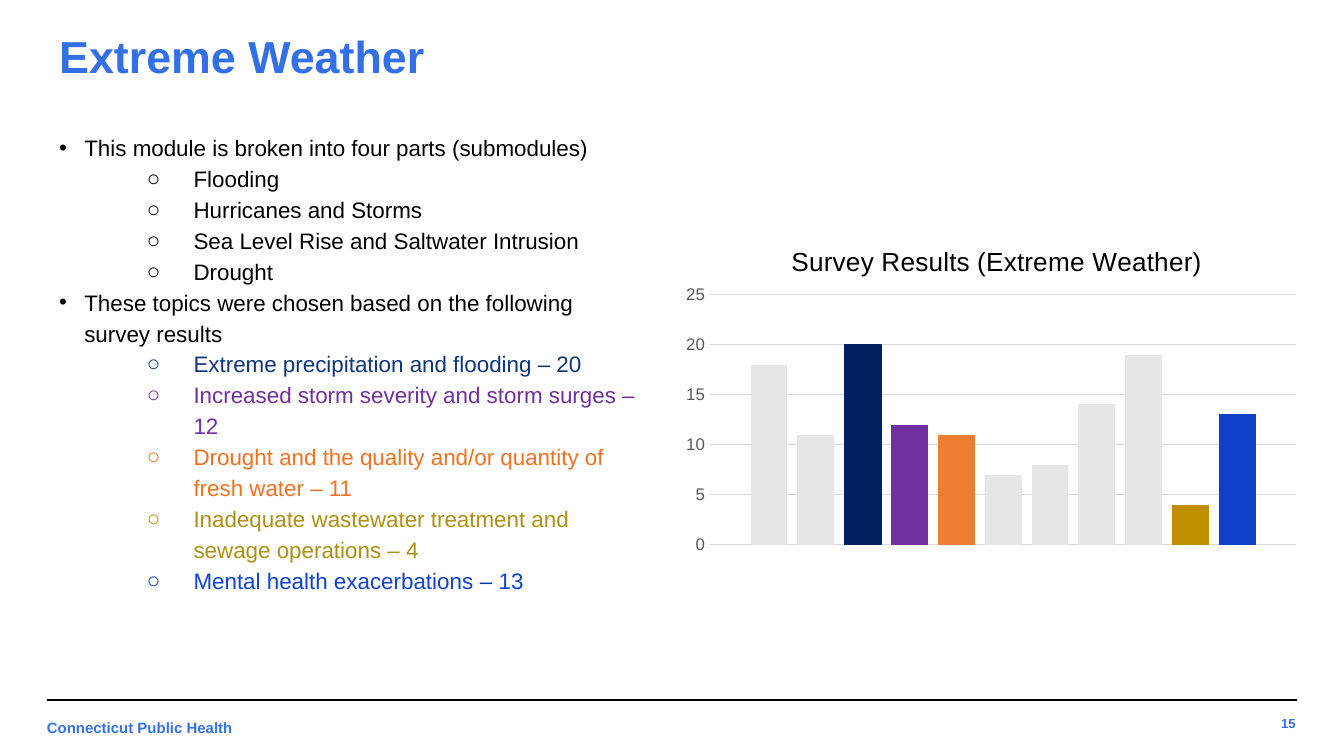
from lxml import etree
from pptx import Presentation
from pptx import util as u
from pptx.chart import data
from pptx.dml import color
from pptx.enum import chart as ch, shapes, text
from pptx.oxml import ns, parse_xml

Pt = u.Pt
FONT = "Arial"
COLORS = {
    "title": "3370E8", "footer": "3371E7", "black": "000000",
    "flood": "0F357E", "storm": "7030A0", "drought": "F17121",
    "sewage": "AD9113", "mental": "0F42D2", "dash": "003D9C",
    "axis": "595959", "grid": "D9D9D9", "bar": "E7E6E6",
    "flood_bar": "002060", "drought_bar": "ED7D31",
    "sewage_bar": "BF8F00", "mental_bar": "0E40C8",
}


def style(font, size, name, bold=False):
    font.name, font.size, font.bold = FONT, Pt(size), bold
    font.color.rgb = color.RGBColor.from_string(COLORS[name])


def place(sp, left, top, width, height):
    sp.left, sp.top, sp.width, sp.height = Pt(left), Pt(top), Pt(width), Pt(height)
    tf = sp.text_frame
    tf.word_wrap, tf.auto_size = True, text.MSO_AUTO_SIZE.NONE
    tf.margin_left = tf.margin_right = tf.margin_top = tf.margin_bottom = Pt(7.2)
    return tf


prs = Presentation()
prs.slide_width, prs.slide_height = Pt(720), Pt(405)
s = prs.slides.add_slide(prs.slide_layouts[1])

# Title
tf = place(s.shapes.title, 24.5, 18, 671, 23.8)
tf.text = "Extreme Weather"
tf.vertical_anchor = text.MSO_ANCHOR.MIDDLE
tf.paragraphs[0].alignment = text.PP_ALIGN.LEFT
style(tf.paragraphs[0].runs[0].font, 24, "title", True)

# Bulleted list: level, then (wording, colour) runs
items = [
    (0, [("This module is broken into four parts (submodules)", "black")]),
    (1, [("Flooding", "black")]),
    (1, [("Hurricanes and Storms", "black")]),
    (1, [("Sea Level Rise and Saltwater Intrusion", "black")]),
    (1, [("Drought", "black")]),
    (0, [("These topics were chosen based on the following survey results", "black")]),
    (1, [("Extreme precipitation and flooding – 20", "flood")]),
    (1, [("Increased storm severity and storm surges – 12", "storm")]),
    (1, [("Drought and the quality and/or quantity of fresh water – 11", "drought")]),
    (1, [("Inadequate wastewater treatment and sewage operations – 4", "sewage")]),
    (1, [("Mental health exacerbations ", "mental"), ("– ", "dash"), ("13", "mental")]),
]
bullets = [("•", 13.5, -13.5), ("○", 72, -25)]
tf = place(s.placeholders[1], 24.5, 62.6, 325.4, 293)
tf.vertical_anchor = text.MSO_ANCHOR.TOP
for i, (level, runs) in enumerate(items):
    p = tf.add_paragraph() if i else tf.paragraphs[0]
    p.level, p.line_spacing = level, 1.15
    p.space_before = p.space_after = Pt(0)
    p.alignment = text.PP_ALIGN.LEFT
    for wording, name in runs:
        r = p.add_run()
        r.text = wording
        style(r.font, 12, name)
    mark, margin, indent = bullets[level]
    pPr = p._p.get_or_add_pPr()
    pPr.set("marL", str(Pt(margin)))
    pPr.set("indent", str(Pt(indent)))
    etree.SubElement(pPr, ns.qn("a:buFont")).set("typeface", FONT)
    etree.SubElement(pPr, ns.qn("a:buChar")).set("char", mark)

# Survey chart: one series per answer
bars = [(18, "bar"), (11, "bar"), (20, "flood_bar"), (12, "storm"),
        (11, "drought_bar"), (7, "bar"), (8, "bar"), (14, "bar"),
        (19, "bar"), (4, "sewage_bar"), (13, "mental_bar")]
cd = data.CategoryChartData()
cd.categories = ["1"]
for i, (value, name) in enumerate(bars, 1):
    cd.add_series(f"Series {i}", [value])
chart = s.shapes.add_chart(ch.XL_CHART_TYPE.COLUMN_CLUSTERED, Pt(360), Pt(117.4),
                           Pt(341.3), Pt(183.6), cd).chart
style(chart.font, 10, "black")
chart.has_legend = False
chart.has_title = True
tf = chart.chart_title.text_frame
tf.text = "Survey Results (Extreme Weather)"
style(tf.paragraphs[0].runs[0].font, 14, "black")
chart.chart_title.include_in_layout = False

plot = chart.plots[0]
plot.gap_width, plot.overlap, plot.vary_by_categories = 219, -27, False
for series, (value, name) in zip(plot.series, bars):
    rgb = color.RGBColor.from_string(COLORS[name])
    series.format.fill.solid()
    series.format.fill.fore_color.rgb = rgb
    if name == "flood_bar":
        series.format.line.color.rgb = rgb
        series.format.line.width = Pt(0.75)

chart.category_axis.visible = False
axis = chart.value_axis
axis.minimum_scale, axis.maximum_scale, axis.major_unit = 0, 25, 5
axis.major_tick_mark = ch.XL_TICK_MARK.NONE
axis.format.line.fill.background()
style(axis.tick_labels.font, 9, "axis")
grid = axis.major_gridlines.format.line
grid.color.rgb = color.RGBColor.from_string(COLORS["grid"])
grid.width = Pt(0.75)

# Fixed places for the chart title and the plot area
layouts = [
    (chart.chart_title._element, {"xMode": "edge", "yMode": "edge", "x": 0.18, "y": 0.06}),
    (chart._chartSpace.chart.plotArea,
     {"layoutTarget": "inner", "xMode": "edge", "yMode": "edge",
      "x": 0.06, "y": 0.22, "w": 0.92, "h": 0.73}),
]
for parent, values in layouts:
    for old in parent.findall(ns.qn("c:layout")):
        parent.remove(old)
    inner = "".join(f'<c:{k} val="{v}"/>' for k, v in values.items())
    layout = parse_xml(f'<c:layout {ns.nsdecls("c")}><c:manualLayout>{inner}'
                       '</c:manualLayout></c:layout>')
    tx = parent.find(ns.qn("c:tx"))
    parent.insert(0 if tx is None else 1, layout)

# Footer rule
rule = s.shapes.add_connector(shapes.MSO_CONNECTOR.STRAIGHT,
                              Pt(694.8), Pt(375.1), Pt(25.2), Pt(375.1))
rule.line.color.rgb = color.RGBColor.from_string(COLORS["black"])
rule.line.width = Pt(0.75)
etree.SubElement(rule._element.spPr, ns.qn("a:effectLst"))

# Footer name and page number
footers = [
    ("Connecticut Public Health", 8, (18, 378, 236.2, 24.5),
     text.MSO_ANCHOR.TOP, text.PP_ALIGN.LEFT),
    ("15", 7, (658, 378.7, 43.2, 18), text.MSO_ANCHOR.MIDDLE, text.PP_ALIGN.RIGHT),
]
for wording, size, box, anchor, align in footers:
    tf = place(s.shapes.add_textbox(0, 0, 0, 0), *box)
    tf.text = wording
    tf.vertical_anchor = anchor
    tf.paragraphs[0].alignment = align
    style(tf.paragraphs[0].runs[0].font, size, "footer", True)

prs.save("out.pptx")
